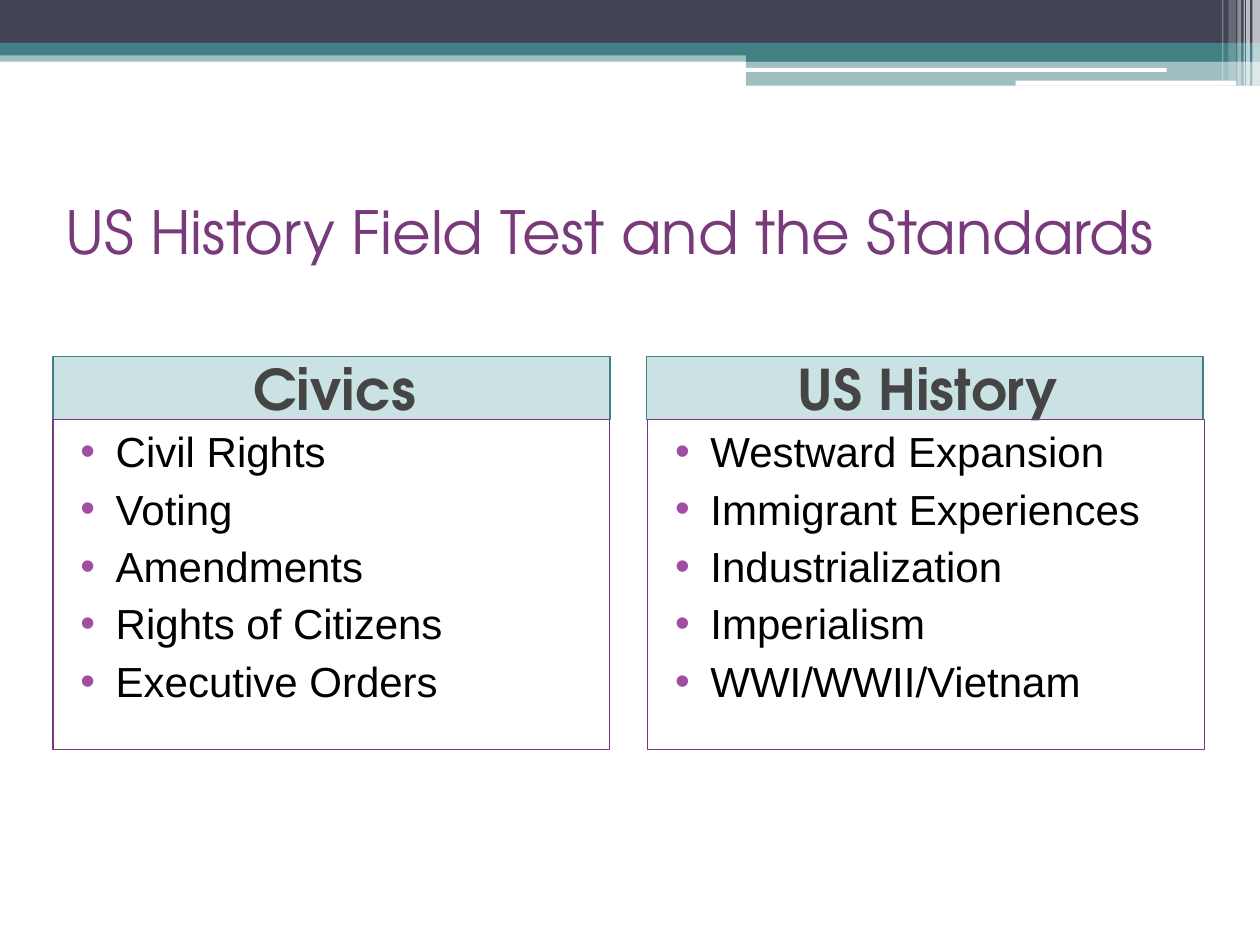
from lxml import etree
from pptx import Presentation
from pptx import util as u
from pptx.dml.color import RGBColor
from pptx.enum import shapes, text
from pptx.oxml import ns

TEAL, NAVY, WHITE, PURPLE = "438086", "424456", "FFFFFF", "783A7A"
HEADING_FONT = "TeX Gyre Adventor"
RECTANGLE = shapes.MSO_SHAPE.RECTANGLE
ROUNDED = shapes.MSO_SHAPE.ROUNDED_RECTANGLE


def color(value):
    return RGBColor.from_string(value)


class SlideBuilder:
    bullet_color = "A04DA3"

    def __init__(self, slide):
        self.slide = slide

    def box(self, left, top, width, height, fill=None, opacity=100,
            line=None, line_width=1, kind=RECTANGLE):
        shape = self.slide.shapes.add_shape(
            kind, *(u.Inches(n) for n in (left, top, width, height)))
        shape.shadow.inherit = False
        if fill:
            shape.fill.solid()
            shape.fill.fore_color.rgb = color(fill)
            if opacity < 100:
                value = shape.fill._xPr.find(".//" + ns.qn("a:srgbClr"))
                etree.SubElement(value, ns.qn("a:alpha"), val=str(opacity * 1000))
        else:
            shape.fill.background()
        if line:
            shape.line.color.rgb = color(line)
            shape.line.width = u.Pt(line_width)
        else:
            shape.line.fill.background()
        return shape

    def add_run(self, paragraph, words, size, font, ink, bold=False):
        run = paragraph.add_run()
        run.text = words
        run.font.size = u.Pt(size)
        run.font.name = font
        run.font.bold = bold
        run.font.color.rgb = color(ink)

    def title(self, words, left, top, width, height):
        shape = self.slide.shapes.add_textbox(
            *(u.Inches(n) for n in (left, top, width, height)))
        frame = shape.text_frame
        frame.word_wrap = True
        frame.vertical_anchor = text.MSO_ANCHOR.MIDDLE
        self.add_run(frame.paragraphs[0], words, 34, HEADING_FONT, PURPLE)

    def heading(self, words, left, top, width, height):
        shape = self.box(left, top, width, height, "328E97", 25, TEAL)
        frame = shape.text_frame
        frame.vertical_anchor = text.MSO_ANCHOR.MIDDLE
        paragraph = frame.paragraphs[0]
        paragraph.alignment = text.PP_ALIGN.CENTER
        paragraph.space_before = u.Pt(3)
        paragraph._p.get_or_add_pPr().set("marL", str(u.Inches(0.05)))
        self.add_run(paragraph, words, 32, HEADING_FONT, "454545", True)

    def bullet_list(self, items, left, top, width, height):
        shape = self.box(left, top, width, height, line=PURPLE, line_width=0.75)
        frame = shape.text_frame
        frame.vertical_anchor = text.MSO_ANCHOR.TOP
        for index, item in enumerate(items):
            paragraph = frame.add_paragraph() if index else frame.paragraphs[0]
            paragraph.alignment = text.PP_ALIGN.LEFT
            paragraph.space_before = u.Pt(4 if index else 3)
            properties = paragraph._p.get_or_add_pPr()
            properties.set("marL", str(u.Inches(0.4)))
            properties.set("indent", str(u.Inches(-0.28)))
            bullet = etree.SubElement(properties, ns.qn("a:buClr"))
            etree.SubElement(bullet, ns.qn("a:srgbClr"), val=self.bullet_color)
            etree.SubElement(properties, ns.qn("a:buFont"), typeface="Arial")
            etree.SubElement(properties, ns.qn("a:buChar"), char="•")
            self.add_run(paragraph, item, 24, "Arial", "000000")


def main():
    presentation = Presentation()
    presentation.slide_width = u.Inches(10)
    presentation.slide_height = u.Inches(7.5)
    builder = SlideBuilder(
        presentation.slides.add_slide(presentation.slide_layouts[6]))

    bands = [
        (0, 0.4, 10, 0.09, TEAL, 50),
        (0, 0, 10, 0.34, NAVY, 100),
        (0, 0.34, 10, 0.1, TEAL, 100),
        (5.92, 0.39, 4.08, 0.1, TEAL, 100),
        (5.92, 0.48, 4.08, 0.2, TEAL, 50),
    ]
    for band in bands:
        builder.box(*band)

    for bar in [(5.91, 0.54, 3.35, 0.03), (8.06, 0.64, 1.75, 0.04)]:
        builder.box(*bar, WHITE, kind=ROUNDED)

    stripes = [
        (9.94, 0.06, 0.68, 65), (9.89, 0.03, 0.68, 65),
        (9.87, 0.01, 0.68, 60), (9.82, 0.03, 0.68, 40),
        (9.75, 0.06, 0.64, 20), (9.7, 0.01, 0.64, 30),
    ]
    for left, width, height, opacity in stripes:
        builder.box(left, 0, width, height, WHITE, opacity)

    builder.title("US History Field Test and the Standards", 0.42, 1.25, 9.17, 1.17)

    columns = [
        ("Civics", 0.42, 0.42,
         ["Civil Rights", "Voting", "Amendments", "Rights of Citizens",
          "Executive Orders"]),
        ("US History", 5.13, 5.14,
         ["Westward Expansion", "Immigrant Experiences", "Industrialization",
          "Imperialism", "WWI/WWII/Vietnam"]),
    ]
    for name, heading_left, list_left, topics in columns:
        builder.heading(name, heading_left, 2.83, 4.42, 0.5)
        builder.bullet_list(topics, list_left, 3.33, 4.42, 2.62)

    presentation.save("out.pptx")


if __name__ == "__main__":
    main()
